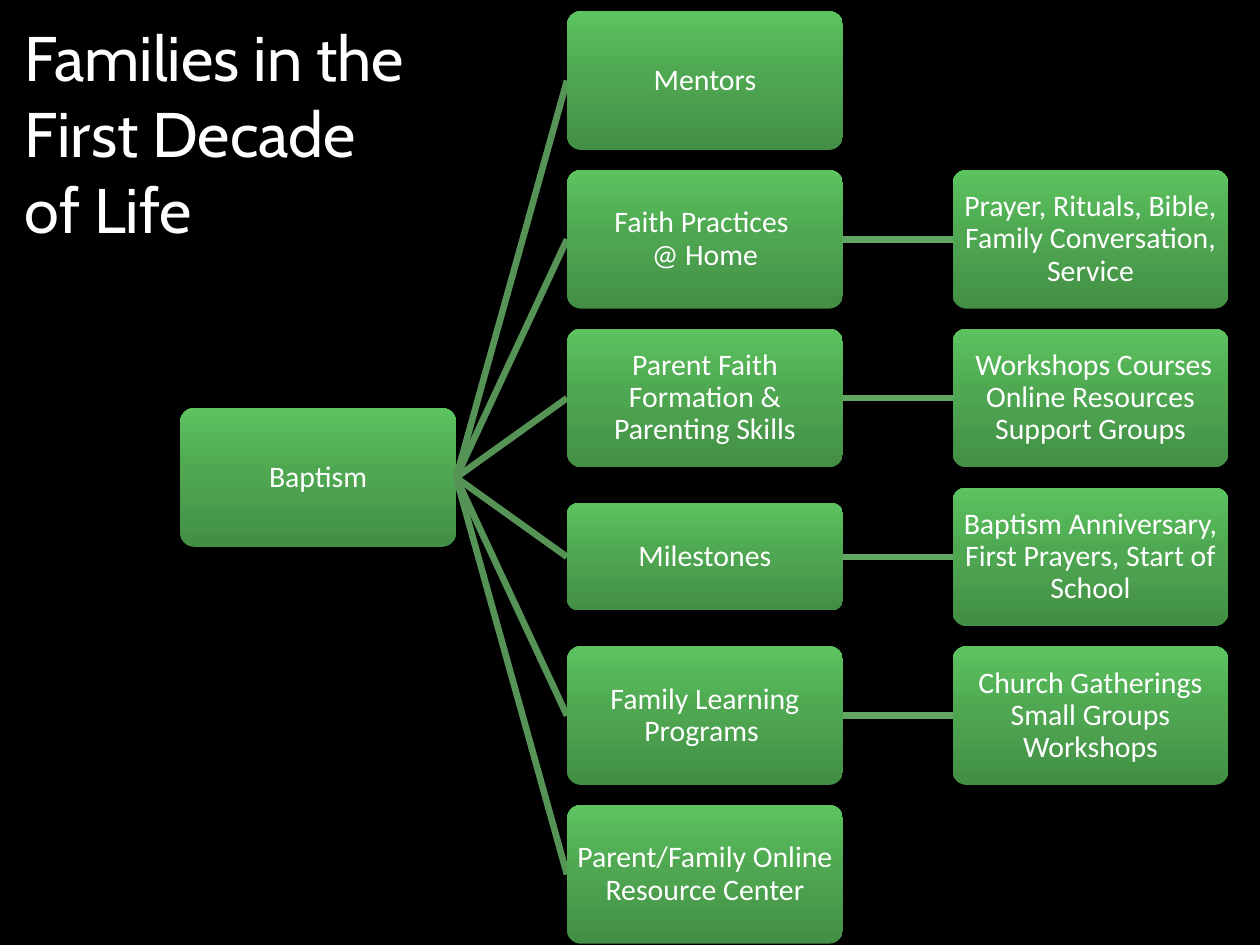
from copy import deepcopy

from lxml import etree
from pptx import Presentation
from pptx.dml import color
from pptx.enum import shapes, text
from pptx.oxml import ns
from pptx.util import Inches, Pt

GREENS = [(0, "438F45"), (0.55, "4FA851"), (1, "5CC35F")]
BOX_WIDTH, BOX_HEIGHT = 2.19, 1.1
ROW_STEP = 1.26
COLUMNS = [0, 3.07, 6.13]
BRANCHES = [
    ("Mentors", None),
    ("Faith Practices \n@ Home", "Prayer, Rituals, Bible, Family Conversation, Service"),
    ("Parent Faith Formation & Parenting Skills",
     " Workshops Courses\nOnline Resources\nSupport Groups"),
    ("Milestones", "Baptism Anniversary, First Prayers, Start of School"),
    ("Family Learning Programs ", "Church Gatherings\nSmall Groups\nWorkshops"),
    ("Parent/Family Online Resource Center", None),
]
SHORT_HEIGHTS = {"Milestones": 0.85}


def rgb(value):
    return color.RGBColor.from_string(value)


def write(frame, words, size, font, align=text.PP_ALIGN.LEFT, spacing=None,
          anchor=text.MSO_ANCHOR.TOP, inset=None):
    frame.word_wrap = True
    frame.vertical_anchor = anchor
    if inset is not None:
        frame.margin_left = frame.margin_right = Inches(inset)
        frame.margin_top = frame.margin_bottom = Inches(inset)
    para = frame.paragraphs[0]
    para.text = words
    para.alignment = align
    para.line_spacing = spacing
    for span in para.runs:
        span.font.size = Pt(size)
        span.font.name = font
        span.font.color.rgb = rgb("FFFFFF")


def fill_gradient(shape):
    shape.fill.gradient()
    shape.fill.gradient_angle = 90
    stop_list = shape.element.spPr.find(".//" + ns.qn("a:gsLst"))
    stop_list.append(deepcopy(stop_list[0]))
    for stop, (position, green) in zip(shape.fill.gradient_stops, GREENS):
        stop.position = position
        stop.color.rgb = rgb(green)


def add_node(page, left, middle, words):
    height = SHORT_HEIGHTS.get(words, BOX_HEIGHT)
    node = page.shapes.add_shape(
        shapes.MSO_SHAPE.ROUNDED_RECTANGLE, Inches(left), Inches(middle - height / 2),
        Inches(BOX_WIDTH), Inches(height))
    node.adjustments[0] = 0.1
    node.shadow.inherit = False
    node.line.fill.background()
    fill_gradient(node)
    write(node.text_frame, words, 17, "Calibri", align=text.PP_ALIGN.CENTER,
          spacing=0.9, anchor=text.MSO_ANCHOR.MIDDLE, inset=0.01)


def add_link(page, start, end, green):
    link = page.shapes.add_connector(
        shapes.MSO_CONNECTOR.STRAIGHT, *(Inches(length) for length in start + end))
    link.line.color.rgb = rgb(green)
    link.line.width = Pt(3.78)
    etree.SubElement(link.element.spPr, ns.qn("a:effectLst"))


def add_tree(page, left, top):
    root_x, branch_x, leaf_x = (left + column for column in COLUMNS)
    first = top + BOX_HEIGHT / 2
    middle = first + ROW_STEP * (len(BRANCHES) - 1) / 2
    add_node(page, root_x, middle, "Baptism")
    for row, (branch, leaf) in enumerate(BRANCHES):
        level = first + row * ROW_STEP
        add_link(page, (root_x + BOX_WIDTH, middle), (branch_x, level), "569357")
        add_node(page, branch_x, level, branch)
        if leaf:
            add_link(page, (branch_x + BOX_WIDTH, level), (leaf_x, level), "61A663")
            add_node(page, leaf_x, level, leaf)


def add_title(page, left, top, width, height):
    box = page.shapes.add_textbox(*(Inches(n) for n in (left, top, width, height)))
    write(box.text_frame, "Families in the First Decade of Life", 36, "Cabin")


def main():
    deck = Presentation()
    deck.slide_width, deck.slide_height = Inches(10), Inches(7.5)
    page = deck.slides.add_slide(deck.slide_layouts[6])
    page.background.fill.solid()
    page.background.fill.fore_color.rgb = rgb("000000")
    add_tree(page, 1.43, 0.09)
    add_title(page, 0.1, 0.1, 3.26, 2.52)
    deck.save("out.pptx")


if __name__ == "__main__":
    main()
